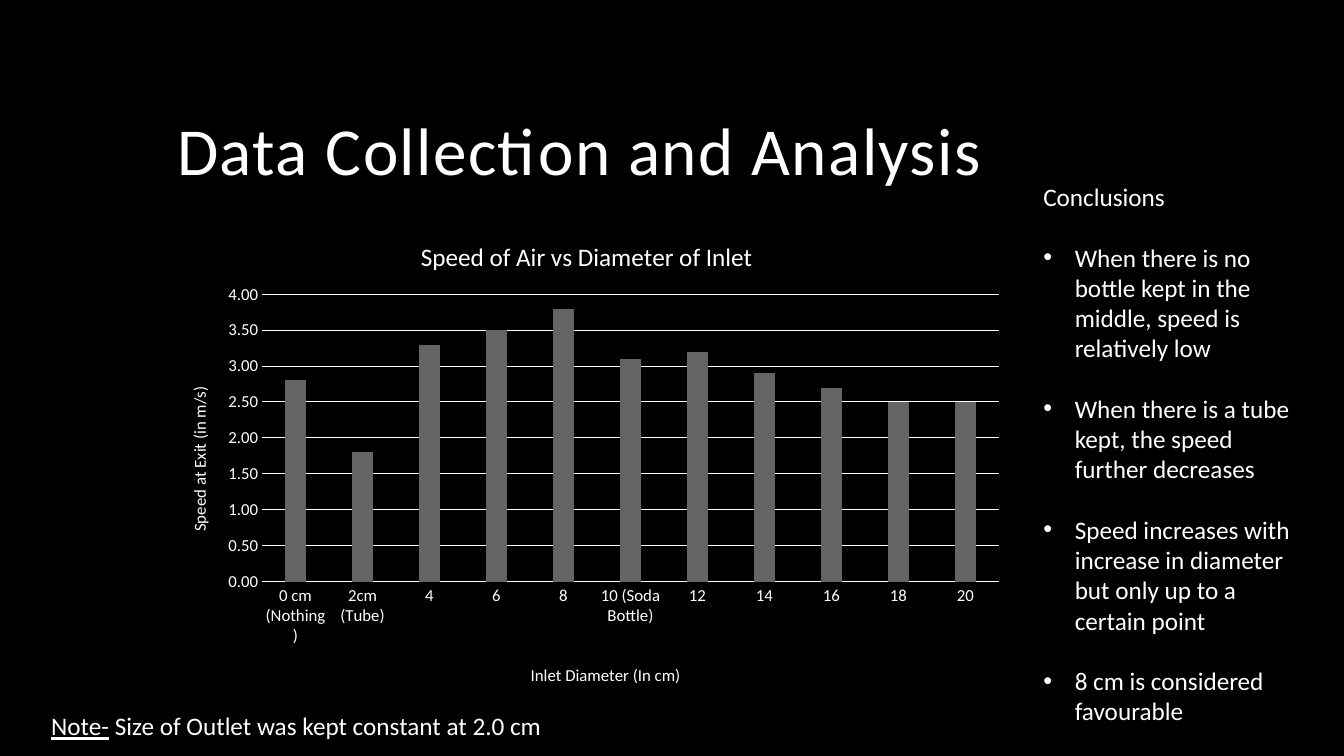
import pptx
import pptx.chart.data
import pptx.dml.color
import pptx.enum.chart
import pptx.enum.text
import pptx.oxml
import pptx.oxml.ns
import pptx.util

Pt = pptx.util.Pt
FONT = "Calibri"
COLORS = {"background": "000000", "text": "FFFFFF", "grid": "FFFFFF", "bar": "646464"}

TITLE = "Data Collection and Analysis"
HEADING = "Conclusions"
CONCLUSIONS = [
    "When there is no bottle kept in the middle, speed is relatively low",
    "When there is a tube kept, the speed further decreases",
    "Speed increases with increase in diameter but only up to a certain point",
    "8 cm is considered favourable",
]
NOTE = [("Note-", True), (" Size of Outlet was kept constant at 2.0 cm", False)]

CHART_TITLE = "Speed of Air vs Diameter of Inlet"
CATEGORY_TITLE = "Inlet Diameter (In cm)"
VALUE_TITLE = "Speed at Exit (in m/s)"
SPEEDS = [
    ("0 cm (Nothing)", 2.8), ("2cm (Tube)", 1.8), ("4", 3.3), ("6", 3.5),
    ("8", 3.8), ("10 (Soda Bottle)", 3.1), ("12", 3.2), ("14", 2.9),
    ("16", 2.7), ("18", 2.5), ("20", 2.5),
]

# left, top, width, height in points
PAGE_SIZE = (960, 540)
TITLE_AREA = (119.5, 30, 720, 108)
CHART_AREA = (113.76, 150, 612, 354)
CONCLUSIONS_AREA = (738, 126, 204, 400)
NOTE_AREA = (29.5, 504, 450, 29)


def rgb(name):
    return pptx.dml.color.RGBColor.from_string(COLORS[name])


def style_font(font, size):
    font.name, font.size, font.bold = FONT, Pt(size), False
    font.color.rgb = rgb("text")


def add_span(para, text, size):
    span = para.add_run()
    span.text = text
    style_font(span.font, size)
    return span


def place(box, area):
    box.left, box.top, box.width, box.height = map(Pt, area)


def set_bullet(para, char=None, indent=0):
    properties = para._p.get_or_add_pPr()
    properties.set("marL", str(Pt(indent)))
    properties.set("indent", str(-Pt(indent)))
    tag = f'buChar char="{char}"' if char else "buNone"
    properties.append(pptx.oxml.parse_xml(f"<a:{tag} {pptx.oxml.ns.nsdecls('a')}/>"))


def set_layout(element, before, x, y, size=None):
    """Fix a chart part at fractions of the chart area, ahead of the named tags."""
    for old in element.findall(pptx.oxml.ns.qn("c:layout")):
        element.remove(old)
    values = [("xMode", "edge"), ("yMode", "edge"), ("x", x), ("y", y)]
    if size:
        values = [("layoutTarget", "inner")] + values + [("w", size[0]), ("h", size[1])]
    inner = "".join(f'<c:{tag} val="{value}"/>' for tag, value in values)
    layout = pptx.oxml.parse_xml(
        f"<c:layout {pptx.oxml.ns.nsdecls('c')}><c:manualLayout>{inner}</c:manualLayout></c:layout>")
    for child in element:
        if child.tag in [pptx.oxml.ns.qn(tag) for tag in before]:
            child.addprevious(layout)
            return
    element.append(layout)


def add_chart_title(owner, text, size, x, y):
    owner.has_title = True
    title = owner.chart_title if hasattr(owner, "chart_title") else owner.axis_title
    add_span(title.text_frame.paragraphs[0], text, size)
    set_layout(title._element, ["c:overlay", "c:spPr", "c:txPr"], x, y)


def add_speed_chart(page):
    data = pptx.chart.data.CategoryChartData(number_format="0.00")
    data.categories = [category for category, speed in SPEEDS]
    data.add_series("Series 1", [speed for category, speed in SPEEDS])
    chart = page.shapes.add_chart(
        pptx.enum.chart.XL_CHART_TYPE.COLUMN_CLUSTERED, *map(Pt, CHART_AREA), data).chart
    chart.has_legend = False
    style_font(chart.font, 12)

    plot = chart.plots[0]
    plot.vary_by_categories = False
    plot.gap_width, plot.overlap = 219, -27
    fill = plot.series[0].format.fill
    fill.solid()
    fill.fore_color.rgb = rgb("bar")

    for axis in (chart.category_axis, chart.value_axis):
        axis.major_tick_mark = axis.minor_tick_mark = pptx.enum.chart.XL_TICK_MARK.NONE
        style_font(axis.tick_labels.font, 12)
    values = chart.value_axis
    values.minimum_scale, values.maximum_scale, values.major_unit = 0, 4, 0.5
    values.tick_labels.number_format = "0.00"
    values.tick_labels.number_format_is_linked = False
    values.format.line.fill.background()
    for line in (chart.category_axis.format.line, values.major_gridlines.format.line):
        line.color.rgb = rgb("grid")
        line.width = Pt(0.75)

    add_chart_title(chart, CHART_TITLE, 18, 0.3, 0.05)
    add_chart_title(chart.category_axis, CATEGORY_TITLE, 12, 0.43, 0.91)
    add_chart_title(values, VALUE_TITLE, 12, 0.03, 0.35)
    set_layout(plot._element.getparent(), ["c:barChart"], 0.12, 0.17, (0.86, 0.58))


def fill_title(box):
    place(box, TITLE_AREA)
    frame = box.text_frame
    frame.auto_size = pptx.enum.text.MSO_AUTO_SIZE.NONE
    frame.vertical_anchor = pptx.enum.text.MSO_ANCHOR.BOTTOM
    para = frame.paragraphs[0]
    para.alignment = pptx.enum.text.PP_ALIGN.LEFT
    para.line_spacing = 0.8
    span = add_span(para, TITLE, 48)
    span.font._element.set("spc", "100")


def fill_conclusions(box):
    place(box, CONCLUSIONS_AREA)
    frame = box.text_frame
    frame.auto_size = pptx.enum.text.MSO_AUTO_SIZE.NONE
    heading = frame.paragraphs[0]
    heading.space_before = Pt(0)
    set_bullet(heading)
    add_span(heading, HEADING, 18)
    for conclusion in CONCLUSIONS:
        para = frame.add_paragraph()
        para.space_before = Pt(21.6)
        set_bullet(para, "•", 22.5)
        add_span(para, conclusion, 18)


def add_note(page):
    frame = page.shapes.add_textbox(*map(Pt, NOTE_AREA)).text_frame
    frame.word_wrap = True
    for text, underlined in NOTE:
        add_span(frame.paragraphs[0], text, 18).font.underline = underlined


def main():
    deck = pptx.Presentation()
    deck.slide_width, deck.slide_height = map(Pt, PAGE_SIZE)
    page = deck.slides.add_slide(deck.slide_layouts[1])
    page.background.fill.solid()
    page.background.fill.fore_color.rgb = rgb("background")
    fill_title(page.shapes.title)
    add_speed_chart(page)
    fill_conclusions(page.placeholders[1])
    add_note(page)
    deck.save("out.pptx")


if __name__ == "__main__":
    main()
